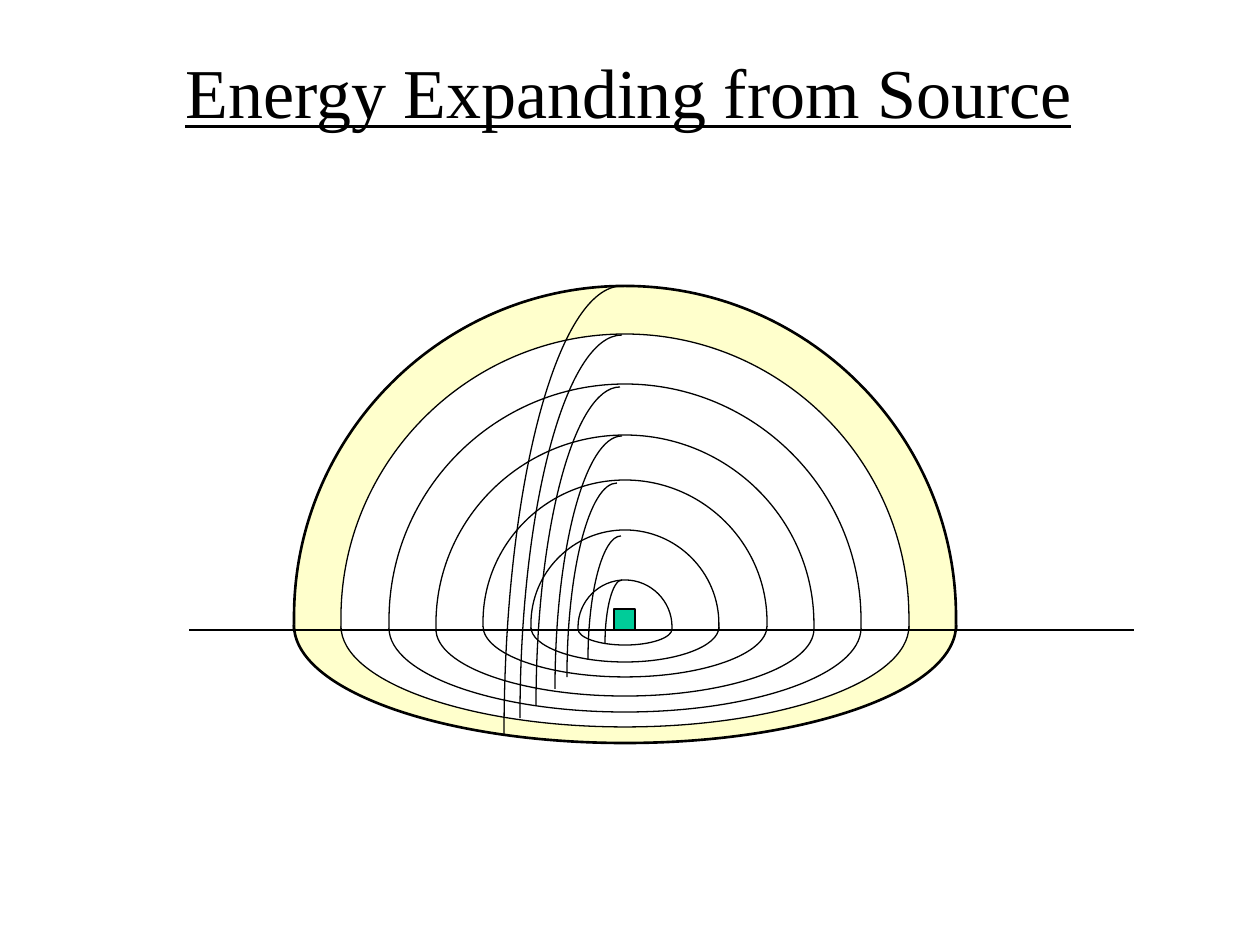
from lxml import etree
from pptx import Presentation
from pptx import util as u
from pptx.dml.color import RGBColor
from pptx.enum import shapes, text
from pptx.oxml.ns import qn

PX = u.Inches(1) / 126
KAPPA = 0.55  # control-arm length of a quarter ellipse
COLORS = {"ink": "000000", "shell": "FFFFCC", "paper": "FFFFFF", "source": "00CC99"}
CENTER_X = 625
RING_STEP = 47.25

# Innermost first: dome top, dome base, bowl rim, bowl bottom
RINGS = [
    (580, 629, 629, 645),
    (530, 629, 627, 662),
    (480, 627, 626, 677),
    (435, 631, 629, 696),
    (384, 630, 628, 712),
    (334, 629, 626, 727),
    (286, 629, 625, 743),
]
# Innermost first: left, top, right, bottom
MERIDIANS = [
    (605, 580, 622, 644),
    (588, 536, 621, 660),
    (567, 483, 617, 677),
    (555, 436, 622, 689),
    (536, 387, 620, 706),
    (520, 335, 622, 718),
    (504, 286, 622, 735),
]


def emu(px):
    return u.Emu(round(px * PX))


def rgb(color):
    return RGBColor.from_string(color)


def style(shape, fill=None, width=0.75):
    shape.shadow.inherit = False
    shape.line.color.rgb = rgb(COLORS["ink"])
    shape.line.width = u.Pt(width)
    if fill:
        shape.fill.solid()
        shape.fill.fore_color.rgb = rgb(fill)
    else:
        shape.fill.background()


def quarter(start, end, corner):
    """Bezier points of a quarter ellipse whose tangents meet at corner."""
    def arm(point):
        return tuple(p + KAPPA * (c - p) for p, c in zip(point, corner))
    return [arm(start), arm(end), end]


def straight(start, end):
    """Bezier points of a straight segment."""
    return [start, end, end]


def add_curve(slide, start, points, **look):
    """Draw an open path; each three points make one cubic segment."""
    builder = slide.shapes.build_freeform(emu(start[0]), emu(start[1]))
    builder.add_line_segments([(emu(x), emu(y)) for x, y in points], close=False)
    shape = builder.convert_to_shape()
    segments = list(shape._element.iter(qn("a:lnTo")))
    for first in range(0, len(segments), 3):
        cubic = etree.Element(qn("a:cubicBezTo"))
        segments[first].addprevious(cubic)
        for segment in segments[first:first + 3]:
            cubic.append(segment[0])
            segment.getparent().remove(segment)
    style(shape, **look)
    return shape


def add_ring(slide, number, **look):
    """Group a dome and the bowl below it into one wavefront."""
    top, base, rim, bottom = RINGS[number - 1]
    radius = round(number * RING_STEP)
    left, right = CENTER_X - radius, CENTER_X + radius
    shoulder = top + radius
    crown, keel = (CENTER_X, top), (CENTER_X, bottom)
    dome = add_curve(
        slide, (right, base),
        straight((right, base), (right, shoulder))
        + quarter((right, shoulder), crown, (right, top))
        + quarter(crown, (left, shoulder), (left, top))
        + straight((left, shoulder), (left, base)),
        **look)
    bowl = add_curve(
        slide, (left, rim),
        quarter((left, rim), keel, (left, bottom))
        + quarter(keel, (right, rim), (right, bottom)),
        **look)
    slide.shapes.add_group_shape([dome, bowl])


def add_meridian(slide, left, top, right, bottom):
    start = (right, top)
    add_curve(slide, start, quarter(start, (left, bottom), (left, top)))


def add_source(slide):
    shape = slide.shapes.add_shape(
        shapes.MSO_SHAPE.RECTANGLE, *map(emu, (614, 609, 21, 21)))
    style(shape, COLORS["source"])


def add_ground(slide):
    line = slide.shapes.add_connector(
        shapes.MSO_CONNECTOR.STRAIGHT, *map(emu, (189, 630, 1134, 630)))
    line.line.color.rgb = rgb(COLORS["ink"])
    line.line.width = u.Pt(0.75)
    etree.SubElement(line._element.spPr, qn("a:effectLst"))


def add_title(slide):
    box = slide.shapes.add_textbox(*map(emu, (168, 42, 921, 97)))
    frame = box.text_frame
    frame.word_wrap = False
    frame.vertical_anchor = text.MSO_ANCHOR.BOTTOM
    paragraph = frame.paragraphs[0]
    paragraph.alignment = text.PP_ALIGN.CENTER
    run = paragraph.add_run()
    run.text = "Energy Expanding from Source"
    look = {"name": "Times New Roman", "size": u.Pt(40), "underline": True}
    for key, value in look.items():
        setattr(run.font, key, value)
    run.font.color.rgb = rgb(COLORS["ink"])


def main():
    presentation = Presentation()
    presentation.slide_width, presentation.slide_height = u.Inches(10), u.Inches(7.5)
    slide = presentation.slides.add_slide(presentation.slide_layouts[6])
    outermost = len(RINGS)
    add_ring(slide, outermost, fill=COLORS["shell"], width=1.5)
    for number in range(outermost - 1, 0, -1):
        add_ring(slide, number, fill=COLORS["paper"])
    for meridian in reversed(MERIDIANS[1:]):
        add_meridian(slide, *meridian)
    add_source(slide)
    add_ground(slide)
    add_meridian(slide, *MERIDIANS[0])
    add_title(slide)
    presentation.save("out.pptx")


if __name__ == "__main__":
    main()
